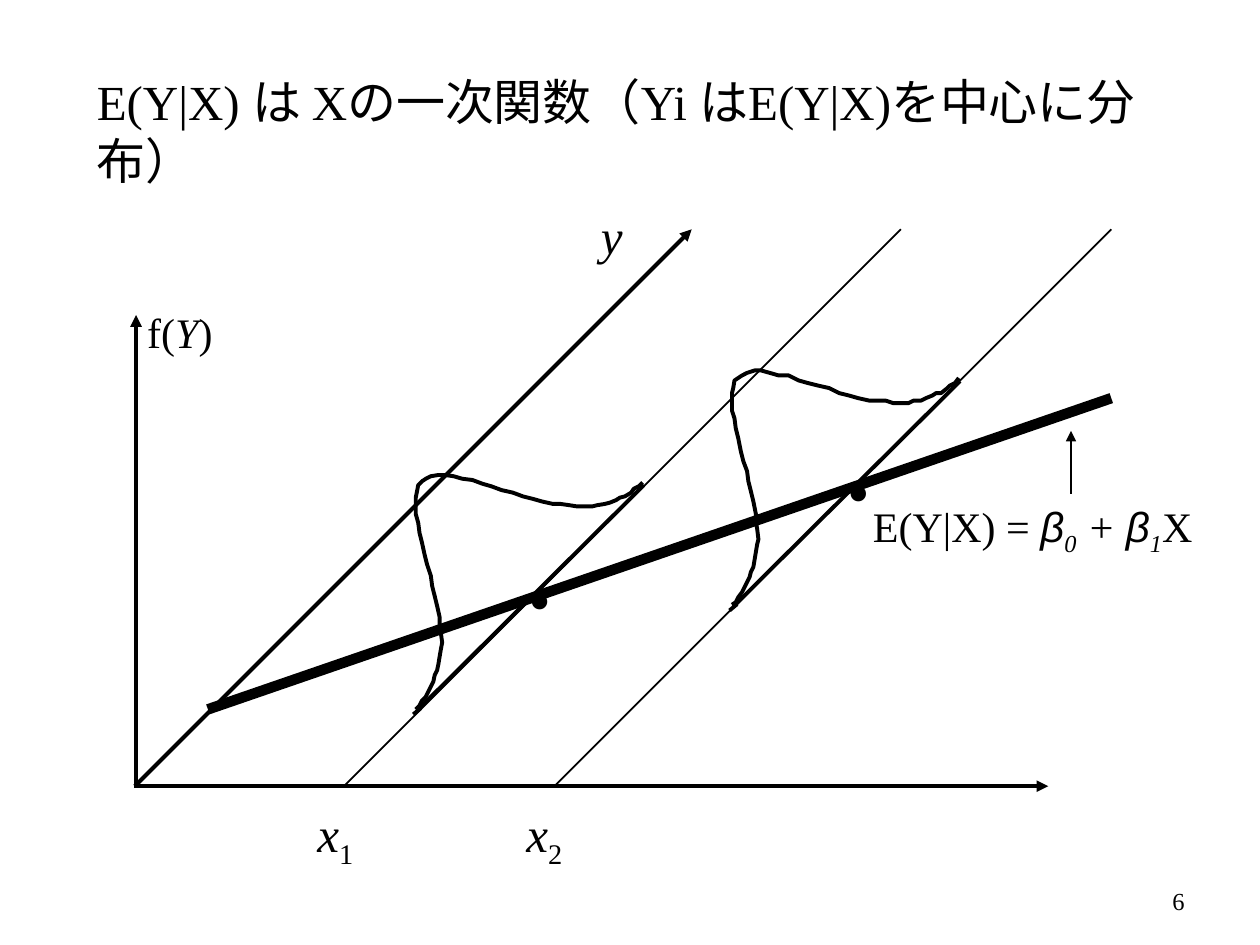
from lxml.etree import SubElement
from pptx import Presentation
from pptx.dml.color import RGBColor
from pptx.enum.shapes import MSO_CONNECTOR as Link
from pptx.enum.text import MSO_ANCHOR as Anchor, PP_ALIGN as Align
from pptx.oxml.ns import qn
from pptx.util import Inches, Pt

BLACK = RGBColor(0, 0, 0)
SERIF, SANS = "Times New Roman", "Arial"
CELL = Inches(0.1)  # the page is a grid of 100 columns by 75 rows

deck = Presentation()
deck.slide_width, deck.slide_height = 100 * CELL, 75 * CELL
page = deck.slides.add_slide(deck.slide_layouts[6])


def draw_line(shapes, start, end, width=2.25, arrow=False):
    ends = [round(value * CELL) for value in (*start, *end)]
    line = shapes.add_connector(Link.STRAIGHT, *ends)
    line.line.color.rgb = BLACK
    line.line.width = Pt(width)
    SubElement(line._element.spPr, qn("a:effectLst"))
    if arrow:
        SubElement(line.line._get_or_add_ln(), qn("a:tailEnd"), type="triangle")


def write(place, *spans, size=28, bold=False, wrap=False,
          align=Align.LEFT, anchor=Anchor.TOP):
    """Each span is (text, style); style holds i for italic, s for subscript, a for sans."""
    box = page.shapes.add_textbox(*(round(value * CELL) for value in place))
    frame = box.text_frame
    frame.word_wrap = wrap
    frame.vertical_anchor = anchor
    para = frame.paragraphs[0]
    para.alignment = align
    for text, style in spans:
        span = para.add_run()
        span.text = text
        font = span.font
        font.name = SANS if "a" in style else SERIF
        font.size, font.bold, font.italic = Pt(size), bold, "i" in style
        font.color.rgb = BLACK
        if "s" in style:
            span._r.get_or_add_rPr().set("baseline", "-25000")


write((71.7, 69.5, 23.3, 4), ("6", ""), size=14, wrap=True,
      align=Align.RIGHT, anchor=Anchor.MIDDLE)

# Axes and the slanted lines parallel to y
origin_x, base, depth = 10.7, 62.4, 44.2
draw_line(page.shapes, (origin_x, base), (83.2, base), arrow=True)
for column, width, arrow in ((origin_x, 2.25, True), (27.3, 1, False), (44, 1, False)):
    draw_line(page.shapes, (column, base), (column + depth, base - depth), width, arrow)
draw_line(page.shapes, (10.8, 62.5), (10.8, 25), arrow=True)

# Regression line, with a dot at each conditional mean
draw_line(page.shapes, (16.5, 56.3), (88.2, 31.6), width=6)
for left, top in ((66.2, 31.7), (40.9, 40.3)):
    write((left, top, 3.9, 10), (".", ""), size=54, bold=True)

for left, index in ((24.2, "1"), (40.8, "2")):
    write((left, 63.3, 5, 5.6), ("x", "i"), (index, "s"))

# Bell curve in hundredths of an inch, from its lower left end
BELL = [
    (0, 0), (3, -3), (5, -7), (8, -10), (10, -14), (12, -18), (14, -22), (15, -27),
    (17, -31), (18, -36), (19, -42), (20, -48), (21, -53), (20, -60), (19, -67),
    (19, -73), (17, -82), (15, -90), (13, -98), (12, -106), (9, -115), (7, -123),
    (5, -132), (3, -140), (2, -148), (0, -155), (0, -162), (0, -168), (1, -173),
    (2, -178), (5, -181), (8, -183), (12, -185), (18, -186), (23, -186), (30, -185),
    (37, -183), (45, -182), (53, -179), (60, -177), (68, -174), (77, -172),
    (85, -169), (93, -167), (100, -165), (109, -163), (115, -163), (122, -162),
    (128, -161), (134, -161), (140, -161), (144, -162), (150, -163), (154, -164),
    (159, -166), (162, -168), (166, -169), (171, -172), (173, -175), (177, -177),
    (180, -180),
]
for left, bottom in ((33, 56.3), (58.1, 48.05)):
    group = page.shapes.add_group_shape().shapes
    draw_line(group, (left - 0.2, bottom + 0.4), (left + 0.4, bottom - 0.1))
    draw_line(group, (left + 0.1, bottom + 0.1), (left + 18.1, bottom - 17.8))
    points = [(left * 10 + x, bottom * 10 + y) for x, y in BELL]
    outline = group.build_freeform(*points[0], scale=CELL / 10)
    outline.add_line_segments(points[1:], close=False)
    curve = outline.convert_to_shape()
    curve.shadow.inherit = False
    curve.fill.background()
    curve.line.color.rgb = BLACK
    curve.line.width = Pt(2.25)

write((6.7, 5.2, 89.1, 5.7), ("E(Y|X) は Xの一次関数（Yi はE(Y|X)を中心に分布）", ""), wrap=True)
write((68.3, 39.2, 27.8, 5.1), ("E(Y|X) = ", ""), ("β", "ia"), ("0", "is"),
      (" + ", "i"), ("β", "ia"), ("1", "is"), ("X", ""), size=24)
draw_line(page.shapes, (85, 39.2), (85, 34.2), width=0.75, arrow=True)
write((46.7, 15.8, 3.7, 5.7), ("y", "i"))
write((10.7, 23.8, 7.3, 5.1), ("f(", ""), ("Y", "i"), (")", ""), size=24)

deck.save("out.pptx")
